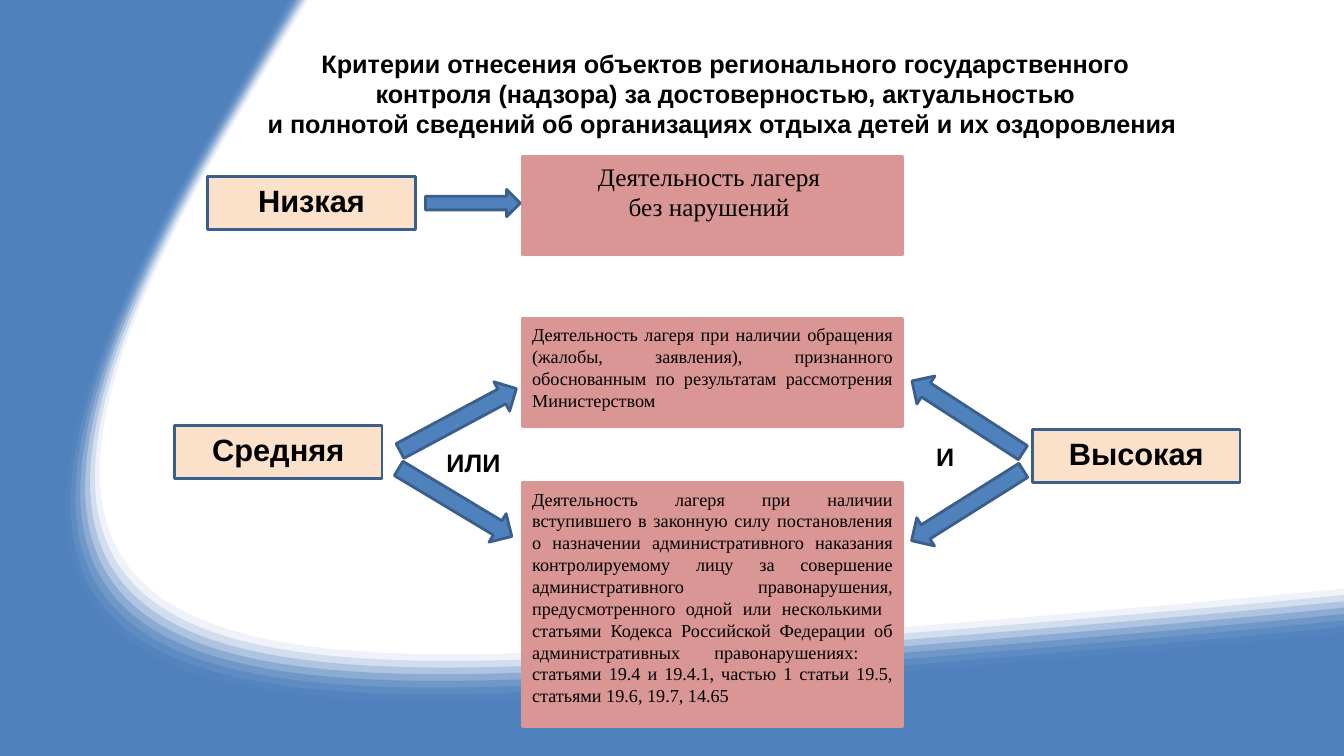
from lxml import etree
from pptx import Presentation
from pptx.dml.color import RGBColor
from pptx.enum import shapes, text
from pptx.oxml import parse_xml
from pptx.oxml.ns import nsdecls, qn
from pptx.util import Inches, Pt

BLUE = RGBColor(0x4F, 0x81, 0xBD)
NAVY = RGBColor(0x3A, 0x5F, 0x8C)
PEACH = RGBColor(0xFA, 0xC0, 0x90)
ROSE = RGBColor(0xD9, 0x96, 0x94)
BLACK = RGBColor(0, 0, 0)
W, H = 13.33, 7.5
CENTER, JUSTIFY, LEFT = text.PP_ALIGN.CENTER, text.PP_ALIGN.JUSTIFY, text.PP_ALIGN.LEFT
RECT, ARROW = shapes.MSO_SHAPE.RECTANGLE, shapes.MSO_SHAPE.RIGHT_ARROW

TITLE = [
    "Критерии отнесения объектов регионального государственного",
    "контроля (надзора) за достоверностью, актуальностью",
    "и полнотой сведений об организациях отдыха детей и их оздоровления ",
]
LEVELS = [("Низкая", 2.06, 1.75), ("Средняя", 1.73, 4.22), ("Высокая", 10.24, 4.26)]
CRITERIA = [
    ("Деятельность лагеря \vбез нарушений ", 1.55, 0.98, 18, CENTER),
    ("Деятельность лагеря при наличии обращения (жалобы, заявления), признанного "
     "обоснованным по результатам рассмотрения Министерством", 3.16, 1.07, 13, JUSTIFY),
    ("Деятельность лагеря при наличии вступившего в законную силу постановления "
     "о назначении административного наказания контролируемому лицу за совершение "
     "административного правонарушения, предусмотренного одной или несколькими  "
     "статьями Кодекса Российской Федерации об административных правонарушениях:  "
     "статьями 19.4 и 19.4.1, частью 1 статьи 19.5, статьями 19.6, 19.7, 14.65 ",
     4.79, 2.42, 13, JUSTIFY),
]
ARROWS = [
    (4.22, 1.88, 0.94, 0.27, 0),
    (3.89, 4, 1.31, 0.33, 331.8),
    (3.86, 4.82, 1.31, 0.33, 31),
    (8.94, 3.97, 1.31, 0.33, 212.9),
    (8.94, 4.85, 1.31, 0.33, 147.8),
]
OPERATORS = [("ИЛИ", 4.33, 4.39, LEFT), ("И", 8.95, 4.33, CENTER)]

EDGE = [(W, 6.56), (W, 6.56), (10.75, 6.82), (6.55, 7.14), (1.06, 7.55),
        (-1.62, 7.12), (1.96, 1.15), (2.4, 0.41), (2.65, 0), (2.65, 0)]
WIDEST = [(W, 5.84), (13.31, 5.84), (10.85, 6.09), (6.9, 6.38), (1.61, 6.78),
          (-0.73, 6.32), (2.4, 1.09), (2.81, 0.4), (3.05, 0.01), (3.06, 0)]
NARROWEST = [(W, 6.47), (12.99, 6.51), (10.48, 6.75), (6.64, 7.04), (1.22, 7.45),
             (-1.42, 7.03), (2.11, 1.14), (2.48, 0.52), (2.71, 0.11), (2.77, 0)]
CORNERS = [(0, 0), (0, H), (W, H)]
BANDS = 11

prs = Presentation()
prs.slide_width, prs.slide_height = Inches(W), Inches(H)
s = prs.slides.add_slide(prs.slide_layouts[5])


def box(x, y, w, h):
    return Inches(x), Inches(y), Inches(w), Inches(h)


def write(tf, lines, size=18, font="Arial", bold=False, align=CENTER,
          anchor=text.MSO_ANCHOR.TOP):
    tf.word_wrap = True
    tf.vertical_anchor = anchor
    for i, line in enumerate(lines):
        p = tf.paragraphs[0] if i == 0 else tf.add_paragraph()
        p.text = line
        p.alignment = align
        for r in p.runs:
            r.font.name, r.font.size, r.font.bold = font, Pt(size), bold
            r.font.color.rgb = BLACK


def paint(sp, fill, line=None, alpha=100):
    sp.shadow.inherit = False
    sp.fill.solid()
    sp.fill.fore_color.rgb = fill
    if alpha < 100:
        color = sp.fill._xPr.solidFill[0]
        color.append(parse_xml(f'<a:alpha {nsdecls("a")} val="{alpha * 1000}"/>'))
    if line is None:
        sp.line.fill.background()
    else:
        sp.line.color.rgb = line
        sp.line.width = Pt(2)


def segment(outline, tag, points=()):
    step = etree.SubElement(outline, qn(tag))
    for x, y in points:
        etree.SubElement(step, qn("a:pt"), x=str(Inches(x)), y=str(Inches(y)))


def curves(outline, knots):
    for k in range(1, len(knots), 3):
        segment(outline, "a:cubicBezTo", knots[k:k + 3])


def swoosh(front, back, alpha=100):
    builder = s.shapes.build_freeform(0, 0)
    builder.add_line_segments([(Inches(W), 0), (Inches(W), Inches(H)), (0, Inches(H))])
    sp = builder.convert_to_shape()
    outline = next(sp._element.iter(qn("a:path")))
    for step in list(outline):
        outline.remove(step)
    segment(outline, "a:moveTo", front[:1])
    curves(outline, front)
    for point in back if back is CORNERS else back[:1]:
        segment(outline, "a:lnTo", [point])
    if back is not CORNERS:
        curves(outline, back)
    segment(outline, "a:close")
    paint(sp, BLUE, alpha=alpha)


swoosh(EDGE, CORNERS)
for i in range(BANDS):
    f = i / (BANDS - 1)
    inner = [(a + (c - a) * f, b + (d - b) * f)
             for (a, b), (c, d) in zip(WIDEST, NARROWEST)]
    swoosh(inner, EDGE[::-1], round(100 * (i + 1) / BANDS))

title = s.shapes.title
title.left, title.top, title.width, title.height = box(1.73, 0.3, 10.93, 1.25)
write(title.text_frame, TITLE, bold=True, anchor=text.MSO_ANCHOR.MIDDLE)
s.shapes._spTree.append(title._element)

for label, x, y in LEVELS:
    sp = s.shapes.add_shape(RECT, *box(x, y, 2.06, 0.53))
    paint(sp, PEACH, NAVY, alpha=47)
    write(sp.text_frame, [label], size=22, bold=True)

for label, y, h, size, align in CRITERIA:
    sp = s.shapes.add_shape(RECT, *box(5.18, y, 3.77, h))
    paint(sp, ROSE, ROSE)
    write(sp.text_frame, [label], size=size, font="Times New Roman", align=align)

for x, y, w, h, angle in ARROWS:
    sp = s.shapes.add_shape(ARROW, *box(x, y, w, h))
    paint(sp, BLUE, NAVY)
    sp.rotation = angle

for label, x, y, align in OPERATORS:
    sp = s.shapes.add_textbox(*box(x, y, 0.85, 0.4))
    write(sp.text_frame, [label], bold=True, align=align)

prs.save("out.pptx")
